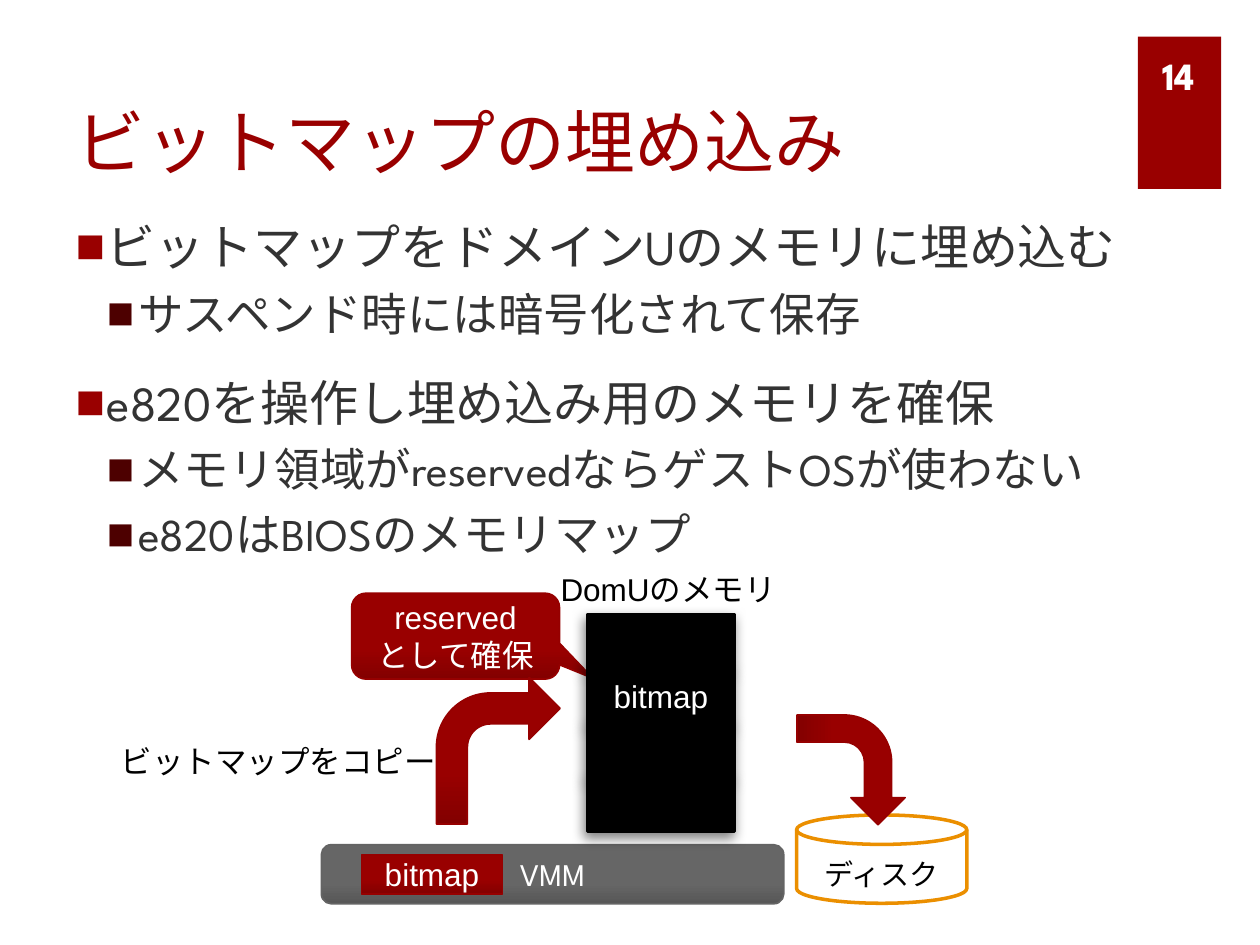
from dataclasses import dataclass

from lxml.etree import SubElement
from pptx import Presentation
from pptx.dml.color import RGBColor
from pptx.enum.shapes import MSO_SHAPE
from pptx.enum.text import MSO_ANCHOR, MSO_AUTO_SIZE, PP_ALIGN
from pptx.oxml.ns import qn
from pptx.util import Cm, Pt


@dataclass(frozen=True)
class Theme:
    """Colours, fonts and type sizes of the slide."""
    red: str = "990000"
    edge: str = "960000"
    shade: str = "830000"
    deep: str = "4D0000"
    grey: str = "666666"
    rim: str = "646464"
    dusk: str = "575757"
    gold: str = "EB8F00"
    ink: str = "333333"
    black: str = "000000"
    white: str = "FFFFFF"
    head: str = "League Spartan"
    sans: str = "Arial"
    title: float = 40
    list: tuple = (28, 26)
    page: float = 22
    note: float = 18
    disk: float = 16.6


def rgb(code):
    """Turn a hex code into a colour."""
    return RGBColor.from_string(code)


def write(para, text, font, size, color, bold=False, align=None):
    """Fill a paragraph with formatted text."""
    para.alignment = align
    for i, line in enumerate(text.split("\n")):
        if i:
            para.add_line_break()
        run = para.add_run()
        run.text = line
        run.font.name, run.font.size, run.font.bold = font, Pt(size), bold
        run.font.color.rgb = rgb(color)


class Deck:
    """Holds the theme and the current slide."""

    def __init__(self, theme):
        """Start a deck with one slide."""
        self.look = theme
        self.file = Presentation()
        self.file.slide_width, self.file.slide_height = Cm(25.4), Cm(19.05)
        self.page = self.file.slides.add_slide(self.file.slide_layouts[1])

    def place(self, item, box, anchor):
        """Move a placeholder and return its text frame."""
        item.left, item.top, item.width, item.height = map(Cm, box)
        frame = item.text_frame
        frame.word_wrap, frame.auto_size = True, MSO_AUTO_SIZE.NONE
        frame.vertical_anchor = anchor
        return frame

    def title(self, text, box):
        """Write the slide title."""
        t = self.look
        frame = self.place(self.page.shapes.title, box, MSO_ANCHOR.BOTTOM)
        write(frame.paragraphs[0], text, t.head, t.title, t.red, align=PP_ALIGN.LEFT)

    def list(self, rows, box):
        """Write the bullet list from pairs of level and text."""
        t = self.look
        frame = self.place(self.page.placeholders[1], box, MSO_ANCHOR.TOP)
        for i, (level, text) in enumerate(rows):
            para = frame.add_paragraph() if i else frame.paragraphs[0]
            para.level = level
            para.space_before, para.line_spacing = Pt((18, 6)[level]), 1.0
            write(para, text, t.head, t.list[level], t.ink)
            self.bullet(para, (t.red, t.deep)[level], level)

    def bullet(self, para, color, level):
        """Give a paragraph a square bullet and a hanging indent."""
        node = para._p.get_or_add_pPr()
        step = Cm(0.63)
        node.set("marL", str(step * (level + 1)))
        node.set("indent", str(-step))
        tint = SubElement(node, qn("a:buClr"))
        SubElement(tint, qn("a:srgbClr"), val=color)
        SubElement(node, qn("a:buSzPct"), val="100000")
        SubElement(node, qn("a:buFont"), typeface=self.look.sans)
        SubElement(node, qn("a:buChar"), char="■")

    def shape(self, kind, box, fill, line=None, width=1, dark=None, turn=0):
        """Draw a preset shape, shaded at its foot if dark is given."""
        item = self.page.shapes.add_shape(kind, *map(Cm, box))
        item.shadow.inherit = False
        item.rotation = turn
        if dark:
            item.fill.gradient()
            item.fill.gradient_angle = 90
            for stop, at, color in zip(item.fill.gradient_stops, (0, 0.35), (dark, fill)):
                stop.position, stop.color.rgb = at, rgb(color)
        else:
            item.fill.solid()
            item.fill.fore_color.rgb = rgb(fill)
        if line:
            item.line.color.rgb, item.line.width = rgb(line), Pt(width)
        else:
            item.line.fill.background()
        return item

    def red(self, kind, box, turn=0):
        """Draw a shaded red shape."""
        t = self.look
        return self.shape(kind, box, t.red, t.edge, dark=t.shade, turn=turn)

    def cast(self, item):
        """Add a soft shadow below a shape."""
        root = item._element.spPr.find(qn("a:effectLst"))
        glow = SubElement(root, qn("a:outerShdw"), blurRad=str(Pt(7)),
                          dist=str(Pt(3)), dir=str(110 * 60000), rotWithShape="0")
        tint = SubElement(glow, qn("a:srgbClr"), val=self.look.black)
        SubElement(tint, qn("a:alpha"), val="50000")

    def label(self, item, text, **form):
        """Centre text in a shape."""
        t = self.look
        frame = item.text_frame
        frame.word_wrap, frame.vertical_anchor = True, MSO_ANCHOR.MIDDLE
        style = dict(font=t.sans, size=t.note, color=t.white, align=PP_ALIGN.CENTER)
        write(frame.paragraphs[0], text, **{**style, **form})
        return frame

    def note(self, text, box, wrap=False, **form):
        """Write a free text box."""
        t = self.look
        frame = self.page.shapes.add_textbox(*map(Cm, box)).text_frame
        frame.word_wrap = wrap
        frame.auto_size = MSO_AUTO_SIZE.NONE if wrap else MSO_AUTO_SIZE.SHAPE_TO_FIT_TEXT
        style = dict(font=t.sans, size=t.note, color=t.black)
        write(frame.paragraphs[0], text, **{**style, **form})


def main():
    """Build the slide and save it."""
    t = Theme()
    deck = Deck(t)
    deck.shape(MSO_SHAPE.RECTANGLE, (22.94, 0.74, 1.68, 3.07), t.red)
    deck.title("ビットマップの埋め込み", (1.27, 0.62, 21.39, 3.18))
    deck.list([
        (0, "ビットマップをドメインUのメモリに埋め込む"),
        (1, "サスペンド時には暗号化されて保存"),
        (0, "e820を操作し埋め込み用のメモリを確保"),
        (1, "メモリ領域がreservedならゲストOSが使わない"),
        (1, "e820はBIOSのメモリマップ"),
    ], (1.27, 4.24, 22.66, 9.17))
    deck.note("14", (22.94, 0.93, 1.4, 1.02), wrap=True, font=t.head, size=t.page,
              color=t.white, bold=True, align=PP_ALIGN.RIGHT)

    call = deck.red(MSO_SHAPE.ROUNDED_RECTANGULAR_CALLOUT, (7.09, 11.96, 4.19, 1.73))
    call.adjustments[0], call.adjustments[1] = 0.66, 0.49
    deck.label(call, "reserved\nとして確保")

    disk = deck.shape(MSO_SHAPE.FLOWCHART_MAGNETIC_DISK, (16.06, 16.43, 3.43, 1.78),
                      t.white, t.gold, 2)
    frame = deck.label(disk, "ディスク", font=t.head, size=t.disk, color=t.black)
    frame.margin_top, frame.margin_bottom = Cm(0.3), 0
    deck.red(MSO_SHAPE.BENT_ARROW, (16.05, 14.43, 2.21, 2.18), turn=90)

    slab = deck.shape(MSO_SHAPE.FLOWCHART_ALTERNATE_PROCESS, (6.48, 17.03, 9.32, 1.19),
                      t.grey, t.rim, dark=t.dusk)
    deck.label(slab, "VMM", font=t.head)
    deck.label(deck.red(MSO_SHAPE.RECTANGLE, (7.29, 17.23, 2.84, 0.79)), "bitmap")

    deck.red(MSO_SHAPE.BENT_ARROW, (8.8, 13.66, 2.49, 2.95))
    deck.note("ビットマップをコピー", (2.19, 14.83, 6.93, 1.02))

    high = 1.09
    for i, text in enumerate(("", "bitmap", "", "")):
        cell = deck.shape(MSO_SHAPE.RECTANGLE, (11.84, 12.4 + i * high, 2.97, high),
                          t.black, t.black, 2)
        deck.cast(cell)
        if text:
            deck.label(cell, text)
    deck.note("DomUのメモリ", (11.05, 11.36, 5.03, 1.02))
    deck.file.save("out.pptx")


if __name__ == "__main__":
    main()
